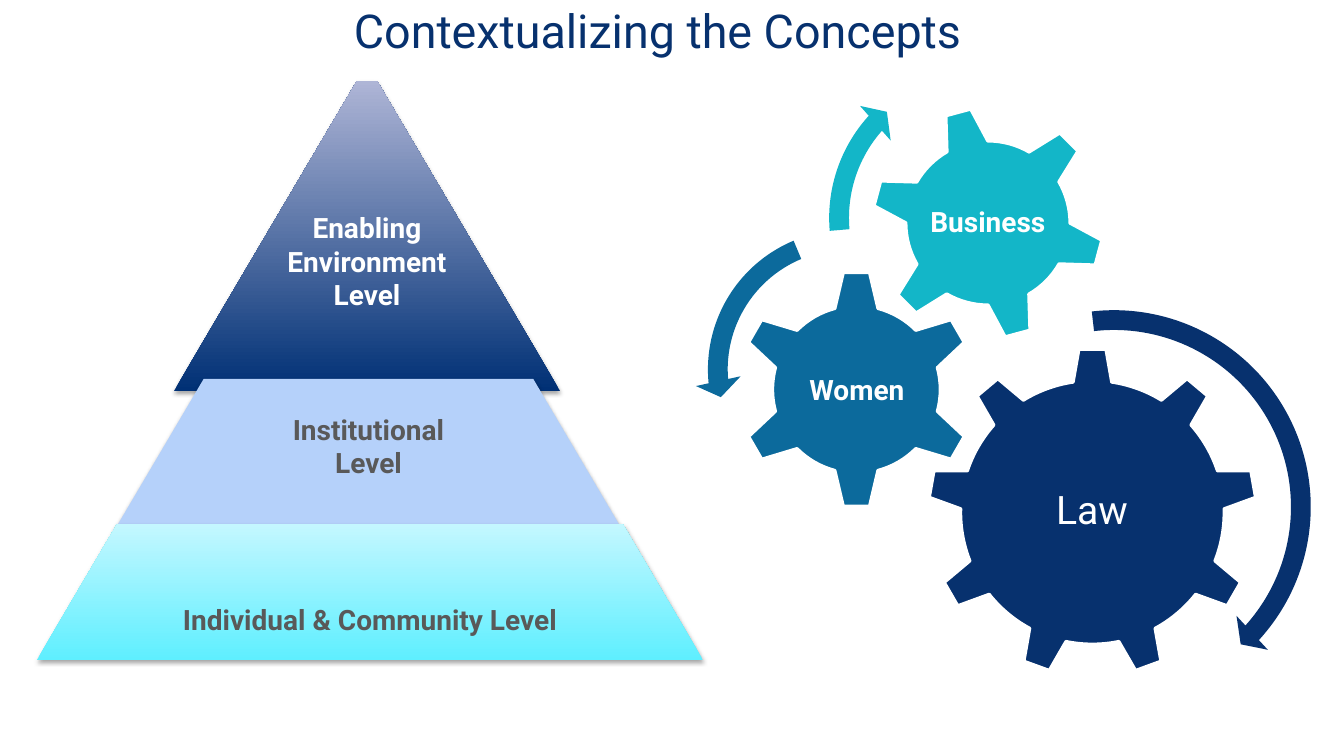
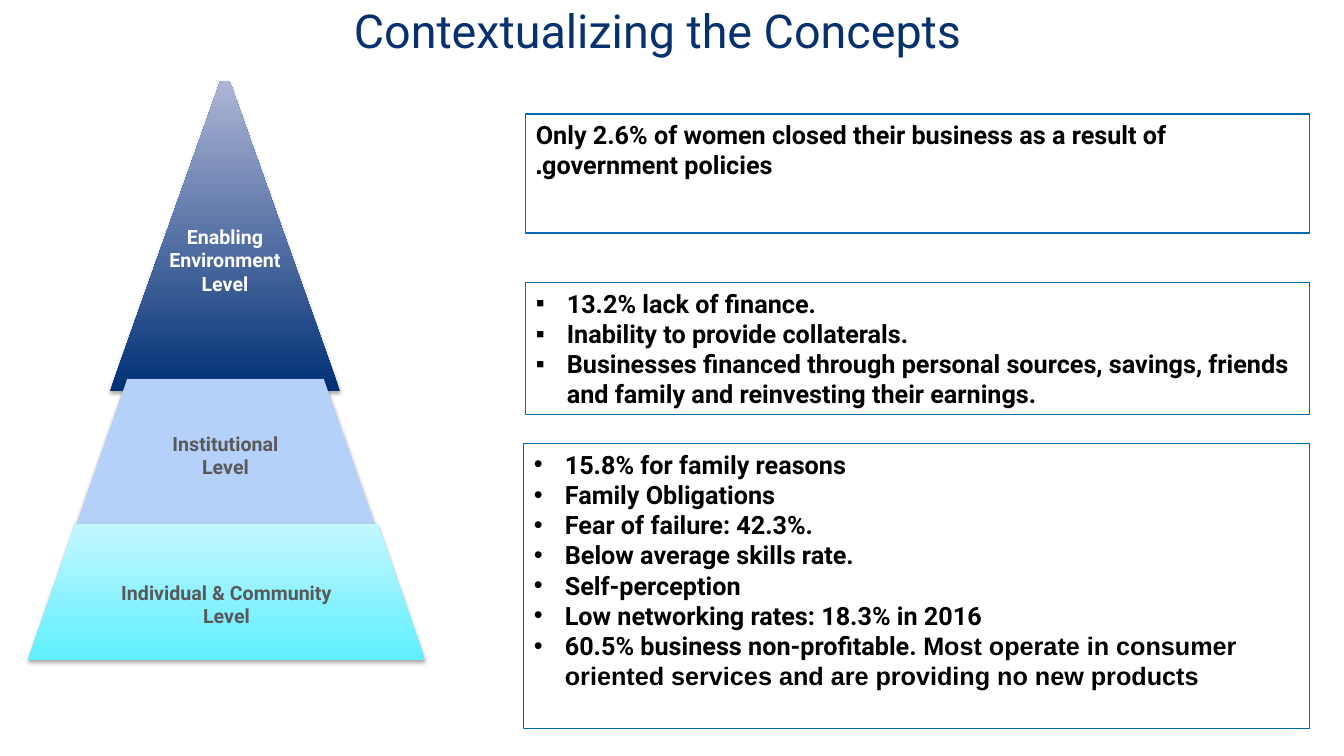
from lxml import etree
from pptx import Presentation
from pptx.dml.color import RGBColor
from pptx.enum.shapes import MSO_SHAPE
from pptx.enum.text import MSO_ANCHOR, PP_ALIGN
from pptx.oxml.ns import qn
from pptx.util import Emu, Pt

NAVY = RGBColor(0x07, 0x31, 0x6E)
BLUE = RGBColor(0x0C, 0x6A, 0x9C)
TEAL = RGBColor(0x13, 0xB6, 0xC8)
EDGE = RGBColor(0x00, 0x6A, 0xAD)
DEEP = RGBColor(0x00, 0x30, 0x75)
MAUVE = RGBColor(0xAE, 0xB5, 0xD6)
SKY = RGBColor(0xB5, 0xD1, 0xFA)
AQUA = RGBColor(0x5F, 0xEF, 0xFF)
ICE = RGBColor(0xC4, 0xF7, 0xFF)
GREY = RGBColor(0x59, 0x59, 0x59)
WHITE = RGBColor(0xFF, 0xFF, 0xFF)
BLACK = RGBColor(0x00, 0x00, 0x00)

RECT = MSO_SHAPE.RECTANGLE
TRAP = MSO_SHAPE.TRAPEZOID
GEAR_SIX = MSO_SHAPE.GEAR_6
GEAR_NINE = MSO_SHAPE.GEAR_9
ARC = MSO_SHAPE.CIRCULAR_ARROW
LEFT_ARC = MSO_SHAPE.LEFT_CIRCULAR_ARROW
LEFT = PP_ALIGN.LEFT
CENTER = PP_ALIGN.CENTER
TOP = MSO_ANCHOR.TOP
MIDDLE = MSO_ANCHOR.MIDDLE

FONT = "Roboto"
PLAIN = "Arial"
INDENT = 31


def px(n):
    return Emu(round(n * 914400 / 100.8))


def write(frame, text, size=18, color=BLACK, bold=True, align=LEFT,
          anchor=TOP, bullet=None, rtl=False):
    frame.word_wrap = True
    frame.vertical_anchor = anchor
    lines = text.split("\n") if isinstance(text, str) else text
    for i, line in enumerate(lines):
        para = frame.paragraphs[0] if i == 0 else frame.add_paragraph()
        para.alignment = align
        props = para._p.get_or_add_pPr()
        if rtl:
            props.set("rtl", "1")
        if bullet:
            props.set("marL", str(px(INDENT)))
            props.set("indent", str(-px(INDENT)))
            etree.SubElement(props, qn("a:buFont"), typeface=PLAIN)
            etree.SubElement(props, qn("a:buChar"), char=bullet)
        parts = (line,) if isinstance(line, str) else line
        for part, name in zip(parts, (FONT, PLAIN)):
            run = para.add_run()
            run.text = part
            run.font.name = name
            run.font.size = Pt(size)
            run.font.bold = bold
            run.font.color.rgb = color


class Deck:
    def __init__(self):
        self.prs = Presentation()
        self.prs.slide_width = px(1344)
        self.prs.slide_height = px(756)
        self.slide = None

    def page(self, title):
        self.slide = self.prs.slides.add_slide(self.prs.slide_layouts[6])
        self.label(title, 658, 30, 1133, 61, size=33.3, color=NAVY, bold=False)

    def label(self, text, x, y, w, h, **style):
        box = self.slide.shapes.add_textbox(
            px(x - w / 2), px(y - h / 2), px(w), px(h))
        frame = box.text_frame
        frame.margin_left = frame.margin_right = px(4)
        frame.margin_top = frame.margin_bottom = px(4)
        write(frame, text, align=CENTER, anchor=MIDDLE, **style)

    def shape(self, kind, x, y, w, h, fill=None, line=None, weight=2, adjust=()):
        item = self.slide.shapes.add_shape(kind, px(x), px(y), px(w), px(h))
        item.shadow.inherit = False
        for i, value in enumerate(adjust):
            item.adjustments[i] = value
        if fill is None:
            item.fill.background()
        elif isinstance(fill, RGBColor):
            item.fill.solid()
            item.fill.fore_color.rgb = fill
        else:
            item.fill.gradient()
            item.fill.gradient_angle = 90
            for stop, color, spot in zip(item.fill.gradient_stops, fill, (0, 1)):
                stop.color.rgb = color
                stop.position = spot
        if line is None:
            item.line.fill.background()
        else:
            item.line.color.rgb = line
            item.line.width = Pt(weight)
        return item

    def gear(self, kind, x, y, size, fill, turn=0):
        item = self.shape(kind, x, y, size, size, fill=fill, line=WHITE)
        item.rotation = turn

    def arc(self, kind, x, y, size, fill, adjust):
        self.shape(kind, x, y, size, size, fill=fill, adjust=adjust)

    def tier(self, x, y, w, h, fill, slope):
        item = self.shape(TRAP, x, y, w, h, fill=fill, adjust=(slope,))
        effects = item._element.spPr.find(qn("a:effectLst"))
        shade = etree.SubElement(
            effects, qn("a:outerShdw"), blurRad=str(Pt(3.1)),
            dist=str(Pt(1.8)), dir="5400000", rotWithShape="0")
        color = etree.SubElement(shade, qn("a:srgbClr"), val=str(BLACK))
        etree.SubElement(color, qn("a:alpha"), val="35000")

    def stack(self, tiers, size):
        for level, (x, w, slope, mid, span) in zip(LEVELS, tiers):
            text, ink, y, h, fill = level
            self.tier(x, y, w, h, fill, slope)
            self.label(text, x + w / 2, mid, span, 110, size=size, color=ink)

    def note(self, text, x, y, w, h, **style):
        item = self.shape(RECT, x, y, w, h, line=EDGE, weight=0.75)
        write(item.text_frame, text, **style)


TITLE = "Contextualizing the Concepts"
LEVELS = (
    ("Enabling\nEnvironment\nLevel", WHITE, 81, 310, (DEEP, MAUVE)),
    ("Institutional\nLevel", GREY, 379, 152, SKY),
    ("Individual & Community Level", GREY, 524, 136, (AQUA, ICE)),
)
WIDE = (
    (174, 386, 0.59, 261, 386),
    (114, 509, 0.59, 446, 331),
    (37, 666, 0.59, 619, 433),
)
SLIM = (
    (110, 230, 0.48, 260, 230),
    (74, 303, 0.35, 455, 198),
    (28, 397, 0.35, 604, 240),
)
GEARS = (
    (GEAR_NINE, 928, 348, 329, NAVY, 0),
    (GEAR_SIX, 737, 270, 239, BLUE, 0),
    (GEAR_SIX, 871, 106, 234, TEAL, 345),
)
NAMES = (
    ("Law", 1092, 509, 28, False),
    ("Women", 857, 389, 20, True),
    ("Business", 988, 221, 20, True),
)
ARCS = (
    (ARC, 904, 297, 420, NAVY, (0.047, 2.99, 25.39, 158.12, 0.055)),
    (LEFT_ARC, 695, 217, 305, BLUE, (0.065, 4.3, 104.89, 148.38, 0.075)),
    (ARC, 816, 53, 330, TEAL, (0.06, 3.94, 133.14, 105.08, 0.07)),
)
POLICY = ("Only 2.6% of women closed their business as a result of "
          "government policies.")
FINANCE = (
    "13.2% lack of finance.",
    "Inability to provide collaterals.",
    "Businesses financed through personal sources, savings, friends "
    "and family and reinvesting their earnings.",
)
FAMILY = (
    "15.8% for family reasons",
    "Family Obligations",
    "Fear of failure: 42.3%.",
    "Below average skills rate.",
    "Self-perception",
    "Low networking rates: 18.3% in 2016",
    ("60.5% business non-profitable. ",
     "Most operate in consumer oriented services and are providing "
     "no new products"),
)


def main():
    deck = Deck()

    deck.page(TITLE)
    for gear in GEARS:
        deck.gear(*gear)
    for text, x, y, size, bold in NAMES:
        deck.label(text, x, y, 140, 60, size=size, color=WHITE, bold=bold)
    for arc in ARCS:
        deck.arc(*arc)
    deck.stack(WIDE, 20)

    deck.page(TITLE)
    deck.stack(SLIM, 14)
    deck.note(POLICY, 526, 114, 784, 119, rtl=True)
    deck.note(FAMILY, 524, 444, 786, 285, bullet="•")
    deck.note(FINANCE, 526, 283, 784, 132, bullet="▪")

    deck.prs.save("out.pptx")


if __name__ == "__main__":
    main()
